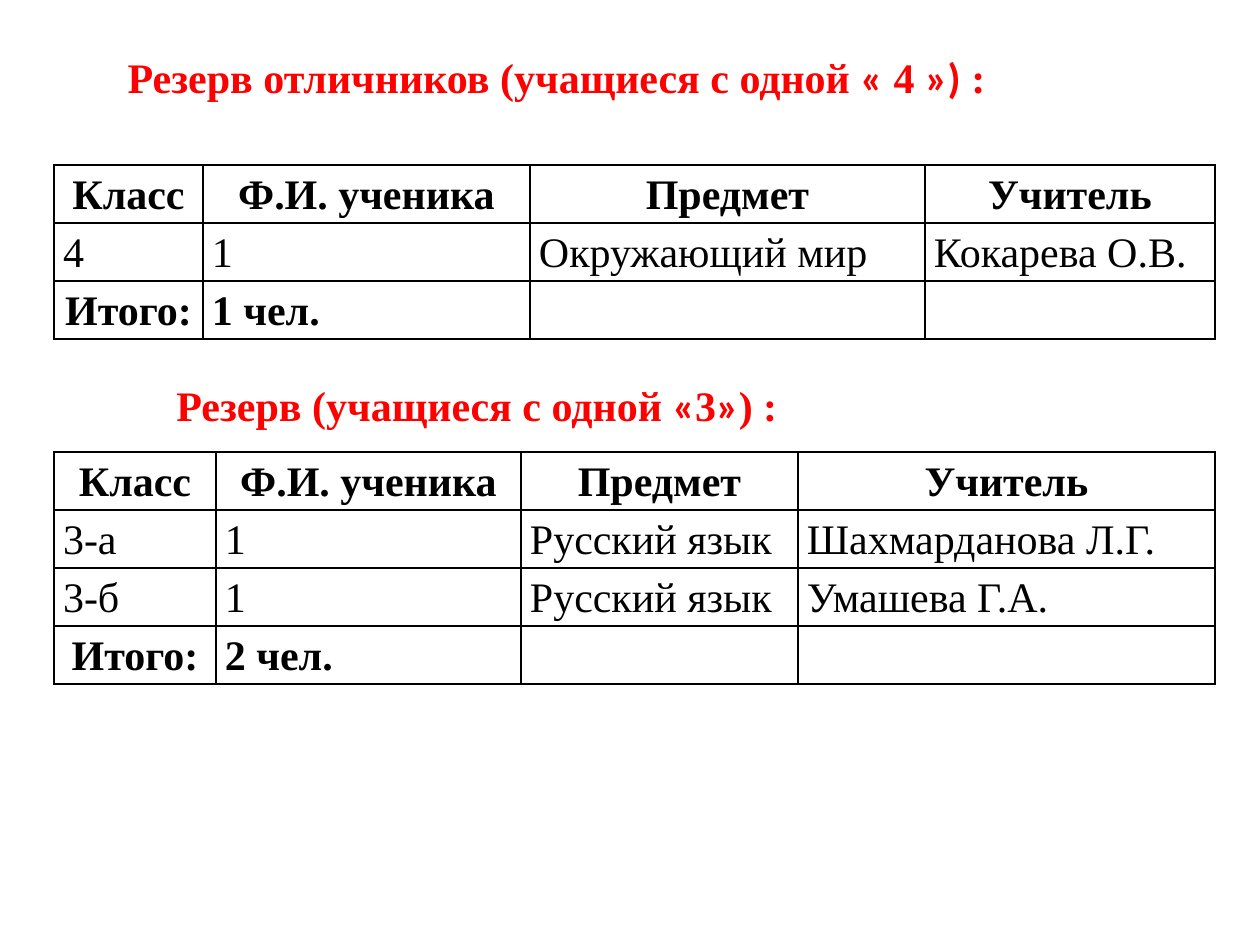
"""Build a slide with two tables of pupils close to a better mark."""
from dataclasses import dataclass

from lxml.etree import fromstring
from pptx import Presentation
from pptx.dml.color import RGBColor as Rgb
from pptx.enum.text import MSO_ANCHOR as Anchor, MSO_AUTO_SIZE as Auto, PP_ALIGN as Align
from pptx.util import Pt

TOP = {
    "head": ("Резерв отличников (учащиеся с одной ", "«", " 4 ", "»)", " :"),
    "box": (115, 45, 893, 63),
    "at": (54, 165),
    "cols": (149, 327, 395, 290),
    "rows": [("4", "1", "Окружающий мир", "Кокарева О.В.")],
    "total": "1 чел.",
}
LOW = {
    "head": ("Резерв (учащиеся с одной ", "«", "3", "»", ") :"),
    "box": (164, 373, 643, 63),
    "at": (54, 452),
    "cols": (162, 305, 277, 417),
    "rows": [
        ("3-а", "1", "Русский язык", "Шахмарданова Л.Г."),
        ("3-б", "1", "Русский язык", "Умашева Г.А."),
    ],
    "total": "2 чел.",
}
NAMES = ("Класс", "Ф.И. ученика", "Предмет", "Учитель")
ROW, PAD = 58, 9
NS = "http://schemas.openxmlformats.org/drawingml/2006/main"


@dataclass
class Theme:
    font: str = "Times New Roman"
    quote: str = "Calibri"
    size: int = 24
    red: str = "FF0000"
    ink: str = "000000"
    line: int = 1


THEME = Theme()


def px(n):
    return round(n * 914400 / 126)


def style(font, color, bold):
    font.name, font.size, font.bold = THEME.font, Pt(THEME.size), bold
    font.color.rgb = Rgb.from_string(color)


def write_head(shape, part):
    shape.left, shape.top, shape.width, shape.height = map(px, part["box"])
    frame = shape.text_frame
    frame.word_wrap, frame.auto_size = True, Auto.NONE
    frame.vertical_anchor = Anchor.TOP
    para = frame.paragraphs[0]
    para.alignment = Align.LEFT
    for i, text in enumerate(part["head"]):
        run = para.add_run()
        run.text = text
        style(run.font, THEME.red, True)
        run.font.name = THEME.quote if i % 2 else THEME.font


def add_edges(cell):
    props = cell._tc.get_or_add_tcPr()
    for i, side in enumerate("LRTB"):
        props.insert(i, fromstring(
            f'<a:ln{side} xmlns:a="{NS}" w="{Pt(THEME.line)}"><a:solidFill>'
            f'<a:srgbClr val="{THEME.ink}"/></a:solidFill></a:ln{side}>'))


def fill_cell(cell, text, bold, mid):
    cell.margin_left = cell.margin_right = px(PAD)
    cell.margin_top = cell.margin_bottom = 0
    cell.fill.background()
    add_edges(cell)
    cell.text = text
    para = cell.text_frame.paragraphs[0]
    para.line_spacing = 1.15
    para.alignment = Align.CENTER if mid else Align.LEFT
    style(para.font, THEME.ink, bold)


def add_grid(slide, part):
    rows = [NAMES, *part["rows"], ("Итого:", part["total"], "", "")]
    cols, last = part["cols"], len(rows) - 1
    size = sum(cols), ROW * len(rows)
    grid = slide.shapes.add_table(
        len(rows), len(cols), *map(px, part["at"] + size)).table
    grid.first_row = grid.horz_banding = False
    for col, wide in zip(grid.columns, cols):
        col.width = px(wide)
    for r, row in enumerate(rows):
        grid.rows[r].height = px(ROW)
        for c, text in enumerate(row):
            mid = r == 0 or (r == last and c == 0)
            fill_cell(grid.cell(r, c), text, r in (0, last), mid)


def main():
    deck = Presentation()
    deck.slide_width, deck.slide_height = px(1260), px(945)
    slide = deck.slides.add_slide(deck.slide_layouts[5])
    write_head(slide.shapes.title, TOP)
    for part in (TOP, LOW):
        add_grid(slide, part)
    write_head(slide.shapes.add_textbox(0, 0, 0, 0), LOW)
    deck.save("out.pptx")


if __name__ == "__main__":
    main()
